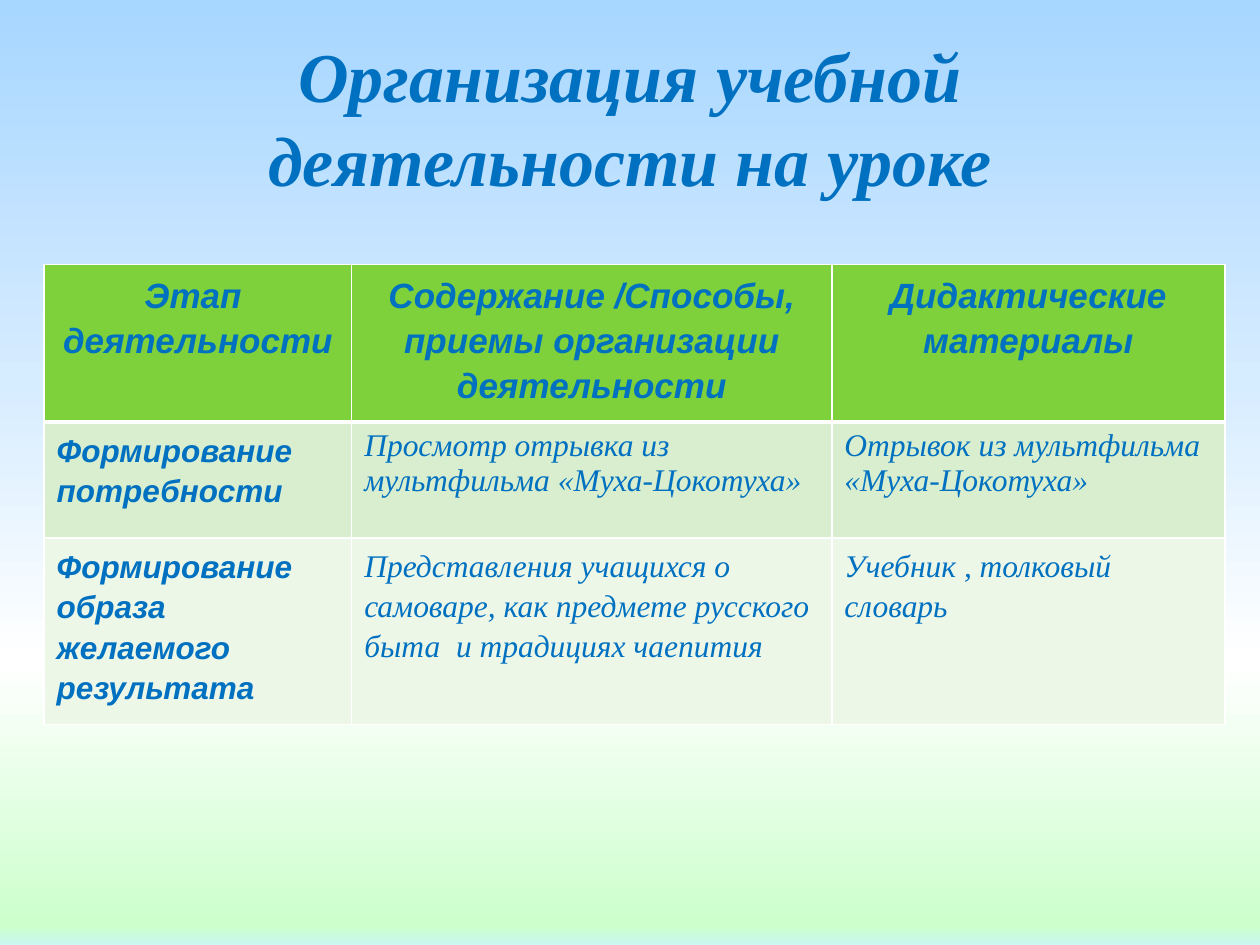
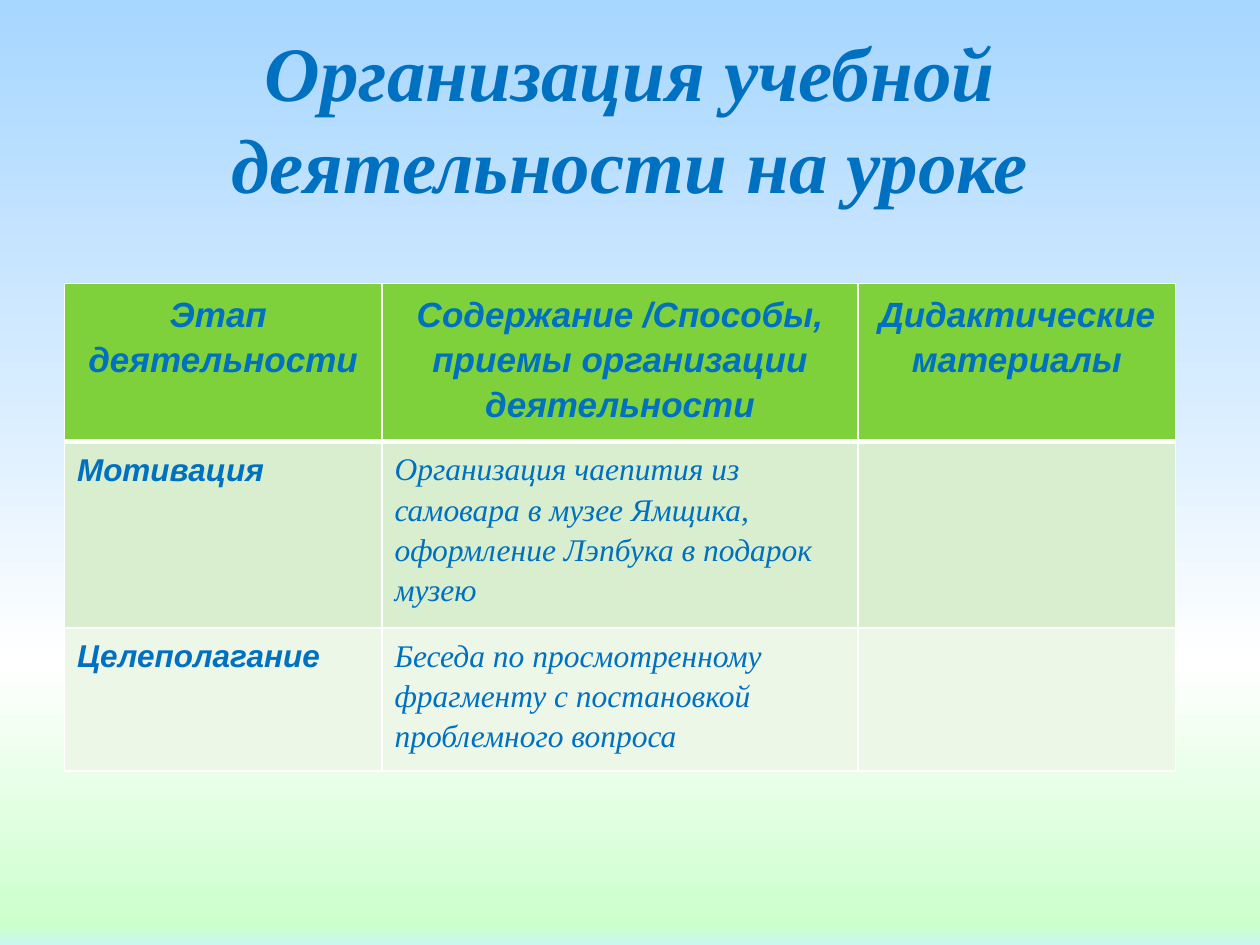
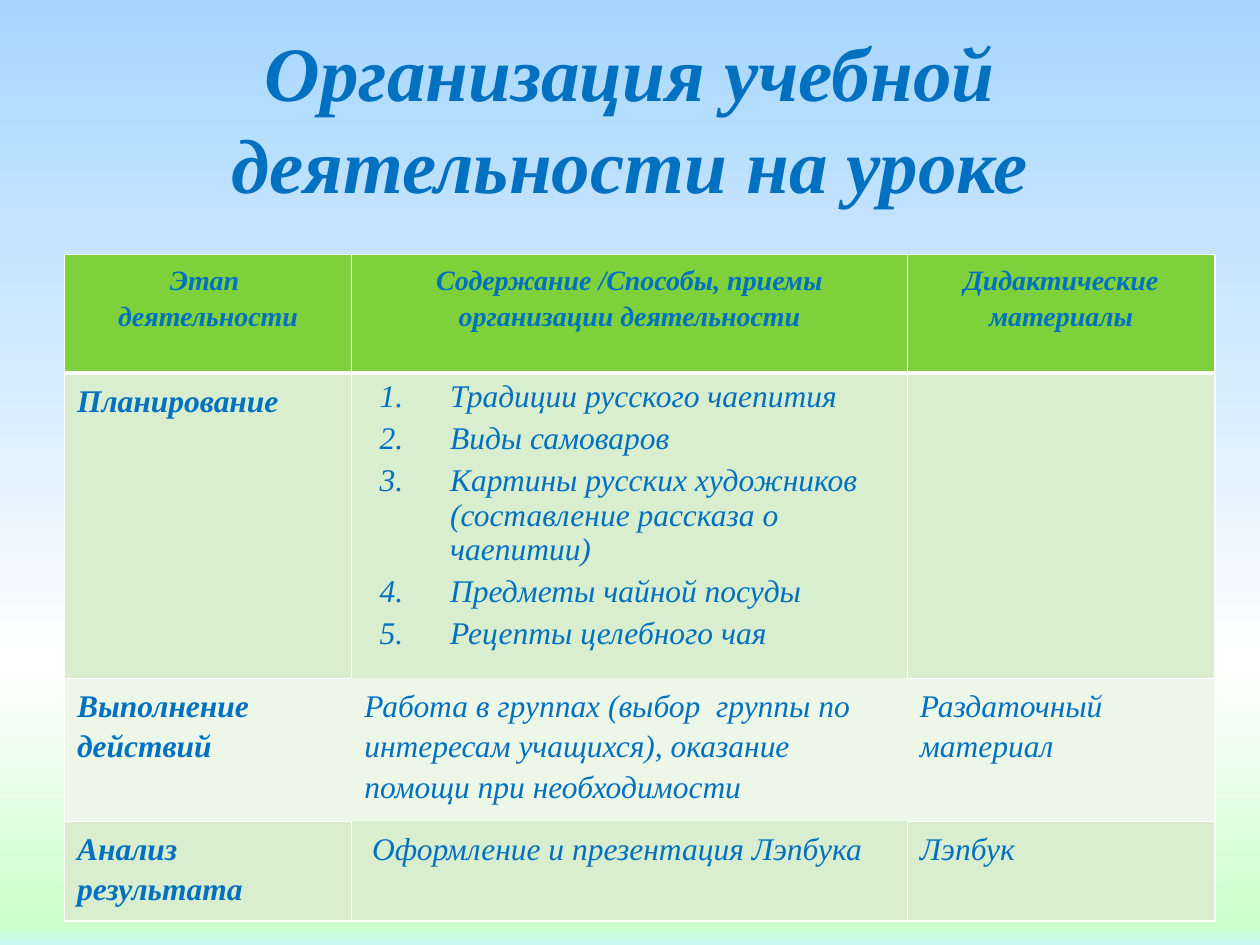
"""Build three slides on how learning is organised in a lesson."""
from dataclasses import dataclass

from lxml.etree import SubElement as Sub
from pptx import Presentation as Deck
from pptx.dml.color import RGBColor as Rgb
from pptx.enum.text import MSO_ANCHOR as Anchor, PP_ALIGN as Align
from pptx.oxml.ns import qn
from pptx.slide import Slide
from pptx.table import _Cell as Box
from pptx.text.text import TextFrame as Frame
from pptx.util import Cm, Pt

BLUE = Rgb(0x00, 0x70, 0xC0)
WHITE = Rgb(0xFF, 0xFF, 0xFF)
GREEN = Rgb(0x7F, 0xD1, 0x3B)
BANDS = (Rgb(0xD8, 0xEE, 0xCE), Rgb(0xEC, 0xF7, 0xE8))
SKY = (
    (0, Rgb(0xA7, 0xD6, 0xFF)),
    (40, Rgb(0xD6, 0xEC, 0xFF)),
    (70, WHITE),
    (98, Rgb(0xCC, 0xFF, 0xCC)),
    (100, Rgb(0xCA, 0xF7, 0xF1)),
)
SERIF, SANS = "Times New Roman", "Arial"
TITLE = "Организация учебной деятельности на уроке"
SIDES = {"L": (0, -1), "R": (0, 1), "T": (-1, 0), "B": (1, 0)}


@dataclass(frozen=True)
class Text:
    """Lines of one cell, with their spacing and numbering."""

    lines: tuple[str, ...] = ()
    lead: float = 1.15
    listed: bool = False


@dataclass(frozen=True)
class Style:
    """Look of a run of text."""

    size: float
    face: str = SERIF
    bold: bool = False
    align: Align = Align.LEFT


@dataclass(frozen=True)
class Page:
    """Content and measures of one slide, in centimetres."""

    size: float
    left: float
    top: float
    cols: tuple[float, ...]
    highs: tuple[float, ...]
    head: Style
    stage: Style
    rows: tuple[tuple[Text, ...], ...]
    bare: tuple[int, int] | None = None


def say(*lines: str, lead: float = 1.15, listed: bool = False) -> Text:
    """Gather lines into the text of a cell."""
    return Text(lines, lead, listed)


HEAD = (
    say("Этап ", "деятельности"),
    say("Содержание /Способы, приемы организации деятельности"),
    say("Дидактические материалы"),
)
SANS_HEAD = Style(20, SANS, True, Align.CENTER)
SANS_STAGE = Style(18, SANS, True)
BODY = Style(18)

PAGES = (
    Page(40, 0.89, 5.33, (6.2, 9.68, 7.92), (2.97, 2.34, 3.51), SANS_HEAD, SANS_STAGE, (
        (
            say("Формирование потребности"),
            say("Просмотр отрывка из мультфильма «Муха-Цокотуха»", lead=1),
            say("Отрывок из мультфильма «Муха-Цокотуха»", lead=1),
        ),
        (
            say("Формирование образа желаемого результата"),
            say("Представления учащихся о самоваре, как предмете русского "
                "быта  и традициях чаепития"),
            say("Учебник , толковый словарь"),
        ),
    )),
    Page(44, 1.3, 5.72, (6.4, 9.6, 6.4), (2.96, 3.49, 2.7), SANS_HEAD, SANS_STAGE, (
        (
            say("Мотивация"),
            say("Организация чаепития из самовара в музее Ямщика, "
                "оформление Лэпбука в подарок музею"),
            say(),
        ),
        (
            say("Целеполагание"),
            say("Беседа по просмотренному фрагменту с постановкой "
                "проблемного вопроса"),
            say(),
        ),
    )),
    Page(44, 1.3, 5.13, (5.79, 11.2, 6.2), (2.39, 5.68, 2.68, 1.87),
         Style(16, SERIF, True, Align.CENTER), Style(18, SERIF, True), (
        (
            say("Планирование"),
            say(
                "Традиции русского чаепития",
                "Виды самоваров",
                "Картины русских художников (составление рассказа о чаепитии)",
                "Предметы чайной посуды",
                "Рецепты целебного чая",
                lead=1, listed=True,
            ),
            say(),
        ),
        (
            say("Выполнение действий"),
            say("Работа в группах (выбор  группы по интересам учащихся), "
                "оказание помощи при необходимости"),
            say("Раздаточный материал"),
        ),
        (
            say("Анализ результата"),
            say(" Оформление и презентация Лэпбука"),
            say("Лэпбук"),
        ),
    ), bare=(2, 1)),
)


def write(frame: Frame, text: Text, style: Style) -> None:
    """Fill a frame with styled paragraphs."""
    for num, line in enumerate(text.lines):
        para = frame.add_paragraph() if num else frame.paragraphs[0]
        para.text = line
        para.alignment = style.align
        para.line_spacing = text.lead
        if text.listed:
            props = para._p.get_or_add_pPr()
            props.set("marL", str(Cm(1.73)))
            props.set("indent", str(Cm(-1.42)))
            Sub(props, qn("a:buAutoNum"), type="arabicPeriod")
            if num:
                para.space_before = Pt(4)
        font = para.font
        font.name, font.size = style.face, Pt(style.size)
        font.bold, font.italic = style.bold, True
        font.color.rgb = BLUE


def edge(box: Box, row: int, col: int, bare: tuple[int, int] | None) -> None:
    """Draw white cell borders, except around the bare cell."""
    props = box._tc.get_or_add_tcPr()
    for side, (down, right) in SIDES.items():
        thick = (row, side) in ((0, "B"), (1, "T"))
        line = Sub(props, qn(f"a:ln{side}"), w=str(Pt(3 if thick else 1)))
        if bare in ((row, col), (row + down, col + right)):
            Sub(line, qn("a:noFill"))
        else:
            fill = Sub(line, qn("a:solidFill"))
            Sub(fill, qn("a:srgbClr"), val=str(WHITE))


def add_title(slide: Slide, size: float) -> None:
    """Add the shared title."""
    frame = slide.shapes.add_textbox(Cm(1.27), Cm(0.76), Cm(22.86), Cm(3.18)).text_frame
    frame.word_wrap = True
    frame.vertical_anchor = Anchor.MIDDLE
    write(frame, say(TITLE, lead=1.0), Style(size, SERIF, True, Align.CENTER))


def add_grid(slide: Slide, page: Page) -> None:
    """Add the table of lesson stages."""
    rows = (HEAD, *page.rows)
    grid = slide.shapes.add_table(
        len(rows), len(HEAD), Cm(page.left), Cm(page.top),
        Cm(sum(page.cols)), Cm(sum(page.highs)),
    ).table
    grid.first_row = grid.horz_banding = False
    for col, width in zip(grid.columns, page.cols):
        col.width = Cm(width)
    for row, high in zip(grid.rows, page.highs):
        row.height = Cm(high)
    for row, texts in enumerate(rows):
        for col, text in enumerate(texts):
            box = grid.cell(row, col)
            edge(box, row, col, page.bare)
            box.fill.solid()
            box.fill.fore_color.rgb = BANDS[(row - 1) % 2] if row else GREEN
            style = page.head if not row else BODY if col else page.stage
            write(box.text_frame, text, style)


def paint(deck: Deck) -> None:
    """Give the master its sky gradient."""
    master = deck.slide_master
    fill = master.background.fill
    fill.gradient()
    fill.gradient_angle = 270
    stops = next(master.element.iter(qn("a:gsLst")))
    for stop in list(stops):
        stops.remove(stop)
    for place, tint in SKY:
        stop = Sub(stops, qn("a:gs"), pos=str(place * 1000))
        Sub(stop, qn("a:srgbClr"), val=str(tint))


def main() -> None:
    """Build and save the deck."""
    deck = Deck()
    deck.slide_width, deck.slide_height = Cm(25.4), Cm(19.05)
    paint(deck)
    for page in PAGES:
        slide = deck.slides.add_slide(deck.slide_layouts[6])
        add_title(slide, page.size)
        add_grid(slide, page)
    deck.save("out.pptx")


if __name__ == "__main__":
    main()
